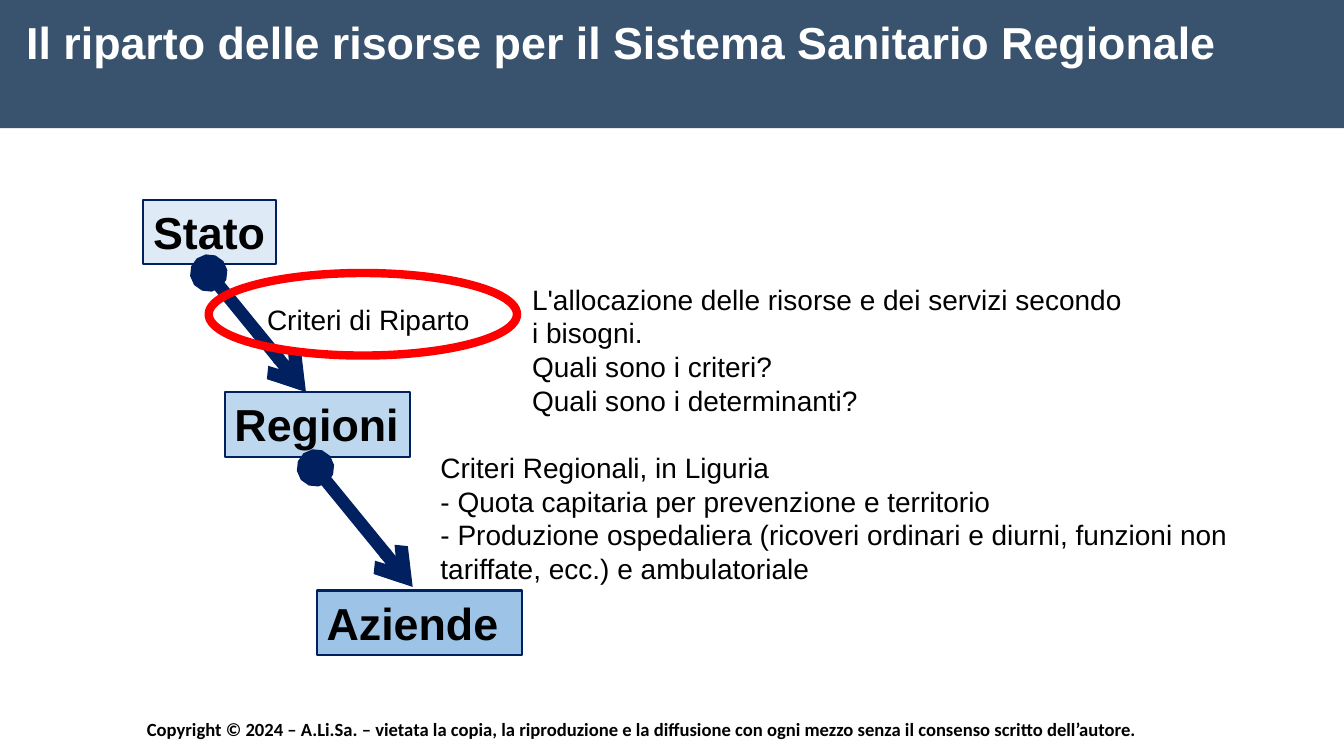
from lxml.etree import SubElement
from pptx import Presentation
from pptx.dml.color import RGBColor
from pptx.enum.shapes import MSO_CONNECTOR as Link, MSO_SHAPE as Preset
from pptx.enum.text import MSO_AUTO_SIZE as Fit, MSO_ANCHOR as Anchor, PP_ALIGN as Align
from pptx.oxml.ns import qn
from pptx.util import Cm, Pt

COLORS = {
    "banner": "39526D", "navy": "002060", "red": "FF0000",
    "black": "000000", "white": "FFFFFF",
    "stato": "DEEBF7", "regioni": "BDD7EE", "aziende": "9DC3E6",
}
HEADING = {"name": "Arial", "size": Pt(32), "bold": True}
BODY = {"name": "Arial", "size": Pt(20), "bold": False}
FOOTER = {"name": "Calibri", "size": Pt(13.3), "bold": True}


class SlideBuilder:
    def __init__(self, slide):
        self.shapes = slide.shapes

    def color(self, name):
        return RGBColor.from_string(COLORS[name])

    def set_lines(self, frame, lines, style, color="black", wrap=True):
        settings = {"word_wrap": wrap, "auto_size": Fit.SHAPE_TO_FIT_TEXT,
                    "vertical_anchor": Anchor.TOP}
        for key, value in settings.items():
            setattr(frame, key, value)
        for index, line in enumerate(lines):
            paragraph = frame.add_paragraph() if index else frame.paragraphs[0]
            paragraph.alignment = Align.LEFT
            run = paragraph.add_run()
            run.text = line
            for key, value in style.items():
                setattr(run.font, key, value)
            run.font.color.rgb = self.color(color)

    def text(self, box, lines, style, **options):
        area = self.shapes.add_textbox(*map(Cm, box))
        self.set_lines(area.text_frame, lines, style, **options)

    def shape(self, preset, box, fill=None, line=None, width=0):
        figure = self.shapes.add_shape(preset, *map(Cm, box))
        figure.shadow.inherit = False
        for part, name in ((figure.fill, fill), (figure.line.fill, line)):
            if name:
                part.solid()
                part.fore_color.rgb = self.color(name)
            else:
                part.background()
        if line:
            figure.line.width = Pt(width)
        return figure

    def level(self, box, label, fill, wrap):
        figure = self.shape(Preset.RECTANGLE, box, fill, "navy", 1.5)
        self.set_lines(figure.text_frame, [label], HEADING, wrap=wrap)

    def arrow(self, x, y, dx, dy):
        link = self.shapes.add_connector(
            Link.STRAIGHT, Cm(x), Cm(y), Cm(x + dx), Cm(y + dy))
        link.line.width = Pt(9)
        link.line.color.rgb = self.color("navy")
        properties = link.element.spPr
        outline = properties.find(qn("a:ln"))
        for end, kind in (("headEnd", "oval"), ("tailEnd", "arrow")):
            SubElement(outline, qn(f"a:{end}"), type=kind)
        SubElement(properties, qn("a:effectLst"))


def main():
    deck = Presentation()
    deck.slide_width, deck.slide_height = Cm(33.87), Cm(19.05)
    page = SlideBuilder(deck.slides.add_slide(deck.slide_layouts[6]))

    page.shape(Preset.RECTANGLE, (0, 0, 33.87, 3.23), "banner")
    page.text((3.45, 17.96, 27.05, 0.84), [
        "Copyright © 2024 – A.Li.Sa. – vietata la copia, la riproduzione e la "
        "diffusione con ogni mezzo senza il consenso scritto dell’autore."], FOOTER)
    page.text((0.41, 0.25, 32.97, 1.63),
              ["Il riparto delle risorse per il Sistema Sanitario Regionale"],
              HEADING, color="white")

    for x, y, width, label, wrap in (
            (3.61, 5.03, 3.35, "Stato", False),
            (5.66, 9.88, 4.67, "Regioni", False),
            (7.98, 14.88, 5.18, "Aziende", True)):
        page.level((x, y, width, 1.63), label, label.lower(), wrap)

    for x, y in ((5.26, 6.88), (7.95, 11.79)):
        page.arrow(x, y, 2.45, 3)

    page.text((6.48, 7.49, 5.66, 1.12), ["Criteri di Riparto"], BODY, wrap=False)
    page.text((10.85, 11.23, 22.99, 3.68), [
        "Criteri Regionali, in Liguria",
        "- Quota capitaria per prevenzione e territorio",
        "- Produzione ospedaliera (ricoveri ordinari e diurni, funzioni non "
        "tariffate, ecc.) e ambulatoriale"], BODY)
    page.shape(Preset.OVAL, (5.26, 6.88, 7.77, 2.08), line="red", width=6)
    page.text((13.16, 6.99, 15.67, 3.68), [
        "L'allocazione delle risorse e dei servizi secondo i bisogni.",
        "Quali sono i criteri?",
        "Quali sono i determinanti?"], BODY)

    deck.save("out.pptx")


if __name__ == "__main__":
    main()
